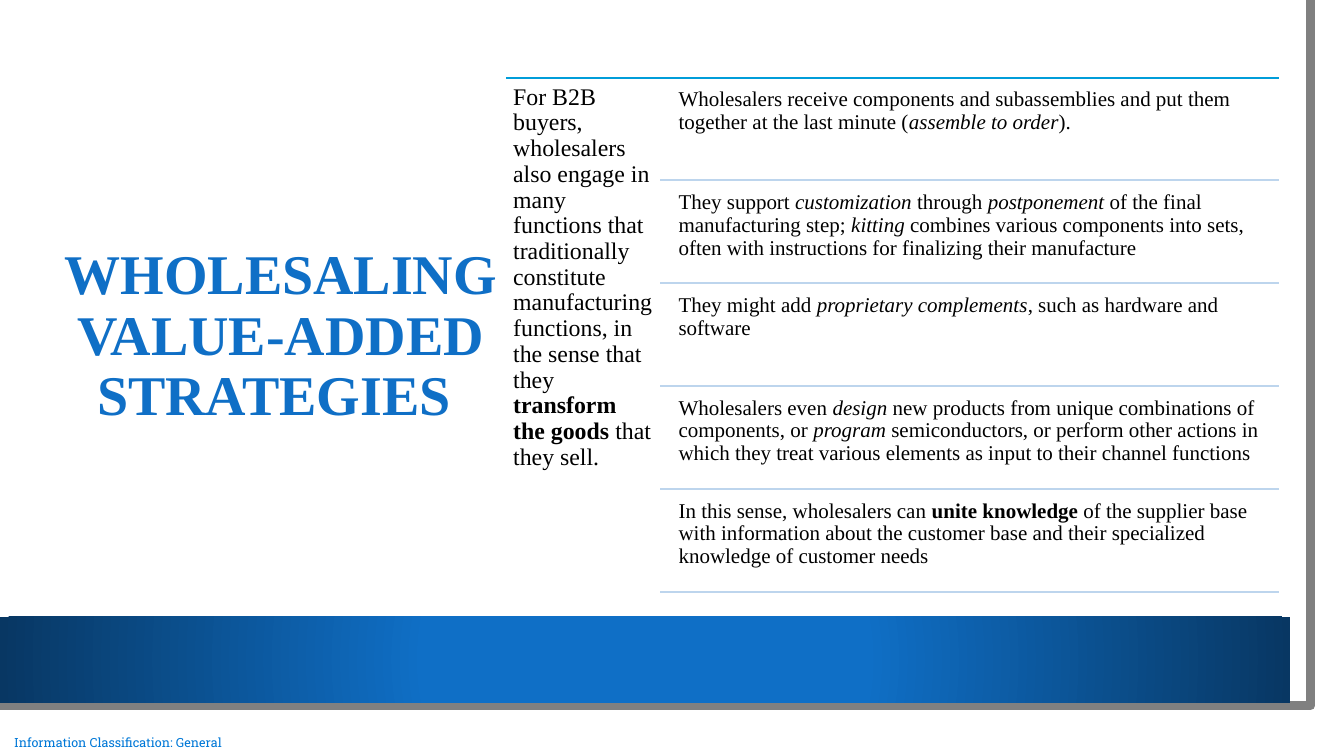
from lxml import etree
from pptx import Presentation
from pptx.dml.color import RGBColor
from pptx.enum.shapes import MSO_CONNECTOR, MSO_SHAPE
from pptx.enum.text import MSO_ANCHOR, PP_ALIGN
from pptx.oxml import parse_xml
from pptx.oxml.ns import nsdecls, qn
from pptx.util import Inches, Pt

TITLE = "WHOLESALING VALUE-ADDED STRATEGIES "
CLASSIFICATION = "Information Classification: General"
# Each run is (text, style); the style names a font attribute or is None.
PREMISE = [
    ("For B2B buyers, wholesalers also engage in many functions that traditionally "
     "constitute manufacturing functions, in the sense that they ", None),
    ("transform the goods ", "bold"),
    ("that they sell.", None),
]
STRATEGIES = [
    [("Wholesalers receive components and subassemblies and put them together "
      "at the last minute (", None),
     ("assemble to order", "italic"), (").", None)],
    [("They support ", None), ("customization", "italic"), (" through ", None),
     ("postponement", "italic"), (" of the final manufacturing step; ", None),
     ("kitting", "italic"),
     (" combines various components into sets, often with instructions for "
      "finalizing their manufacture", None)],
    [("They might add ", None), ("proprietary complements", "italic"),
     (", such as hardware and software", None)],
    [("Wholesalers even ", None), ("design", "italic"),
     (" new products from unique combinations of components, or ", None),
     ("program", "italic"),
     (" semiconductors, or perform other actions in which they treat various "
      "elements as input to their channel functions", None)],
    [("In this sense, wholesalers can ", None), ("unite knowledge ", "bold"),
     ("of the supplier base with information about the customer base and their "
      "specialized knowledge of customer needs", None)],
]

BLUE = RGBColor(0x0F, 0x6F, 0xC6)
NAVY = RGBColor(0x08, 0x37, 0x63)
CYAN = RGBColor(0x00, 0x9D, 0xD9)
PALE_BLUE = RGBColor(0xBD, 0xD5, 0xED)
LABEL_BLUE = RGBColor(0x00, 0x78, 0xD7)
GRAY = RGBColor(0x80, 0x80, 0x80)
BLACK = RGBColor(0, 0, 0)
SERIF, SLAB = "Times New Roman", "Roboto Slab"
TOP, MIDDLE = MSO_ANCHOR.TOP, MSO_ANCHOR.MIDDLE
LEFT, CENTER = PP_ALIGN.LEFT, PP_ALIGN.CENTER
STRAIGHT, RECTANGLE = MSO_CONNECTOR.STRAIGHT, MSO_SHAPE.RECTANGLE

# Content grid, in inches
GRID_TOP, GRID_HEIGHT = 0.77, 5.15
PREMISE_LEFT, PREMISE_WIDTH = 5.02, 1.53
RULE_LEFT = PREMISE_LEFT + PREMISE_WIDTH
STRATEGY_LEFT, GRID_RIGHT = 6.67, 12.69
ROW_GAP, ROW_HEIGHT = 0.05, 0.97
ROW_PITCH = 1.02
PAGE_EDGE = [(12.82, 0), (12.85, 7.02), (-0.03, 7.01)]


def place(shape, left, top, width, height):
    box = dict(left=left, top=top, width=width, height=height)
    for side, length in box.items():
        setattr(shape, side, Inches(length))


def write(shape, runs, size, color, font=SERIF, inset=0.0, anchor=TOP,
          align=LEFT, spacing=0.9, bold=False):
    frame = shape.text_frame
    frame_format = dict(word_wrap=True, vertical_anchor=anchor)
    for side in ("left", "right", "top", "bottom"):
        frame_format["margin_" + side] = Inches(inset)
    for name, value in frame_format.items():
        setattr(frame, name, value)
    paragraph = frame.paragraphs[0]
    paragraph.alignment, paragraph.line_spacing = align, spacing
    paragraph.space_before = Pt(0)
    for text, style in runs:
        run = paragraph.add_run()
        run.text = text
        run_format = dict(name=font, size=Pt(size), bold=bold, italic=False)
        if style:
            run_format[style] = True
        for name, value in run_format.items():
            setattr(run.font, name, value)
        run.font.color.rgb = color


def add_text(slide, box, runs, **text_format):
    shape = slide.shapes.add_textbox(0, 0, 0, 0)
    place(shape, *box)
    write(shape, runs, **text_format)


def add_rule(slide, left, y, color):
    rule = slide.shapes.add_connector(
        STRAIGHT, Inches(left), Inches(y), Inches(GRID_RIGHT), Inches(y))
    rule.line.color.rgb, rule.line.width = color, Pt(1.5)
    etree.SubElement(rule._element.spPr, qn("a:effectLst"))


def add_page_edge(slide):
    start, *corners = PAGE_EDGE
    builder = slide.shapes.build_freeform(*start, scale=Inches(1))
    builder.add_line_segments(corners, close=False)
    edge = builder.convert_to_shape()
    edge.shadow.inherit = False
    edge.fill.background()
    edge.line.color.rgb, edge.line.width = GRAY, Pt(6.5)


def add_footer_band(slide):
    """Blue band that darkens from its centre outwards."""
    band = slide.shapes.add_shape(RECTANGLE, 0, 0, 0, 0)
    place(band, 0, 6.12, 12.8, 0.85)
    band.shadow.inherit = False
    band.line.fill.background()
    gradient = parse_xml(
        f'<a:gradFill {nsdecls("a")} rotWithShape="1"><a:gsLst>'
        f'<a:gs pos="34000"><a:srgbClr val="{BLUE}"/></a:gs>'
        f'<a:gs pos="100000"><a:srgbClr val="{NAVY}"/></a:gs></a:gsLst>'
        '<a:path path="circle"><a:fillToRect l="50000" t="50000" r="50000" b="50000"/>'
        '</a:path></a:gradFill>')
    band._element.spPr.find(qn("a:prstGeom")).addnext(gradient)


def main():
    deck = Presentation()
    deck.slide_width, deck.slide_height = Inches(13.33), Inches(7.5)
    title_only = deck.slide_layouts[5]
    slide = deck.slides.add_slide(title_only)

    add_page_edge(slide)
    add_footer_band(slide)
    add_text(slide, (0.14, 7.24, 2.33, 0.26), [(CLASSIFICATION, None)], size=9,
             color=LABEL_BLUE, font=SLAB, anchor=MIDDLE, spacing=1.0)

    title = slide.shapes.title
    place(title, 0.17, GRID_TOP, 5.23, GRID_HEIGHT)
    write(title, [(TITLE, None)], size=40, color=BLUE, inset=0.1,
          anchor=MIDDLE, align=CENTER, bold=True)

    add_rule(slide, PREMISE_LEFT, GRID_TOP, CYAN)
    add_text(slide, (PREMISE_LEFT, GRID_TOP, PREMISE_WIDTH, GRID_HEIGHT), PREMISE,
             size=17, color=BLACK, inset=0.07)
    for row, strategy in enumerate(STRATEGIES):
        row_top = GRID_TOP + row * ROW_PITCH
        add_text(slide, (STRATEGY_LEFT, row_top + ROW_GAP,
                         GRID_RIGHT - STRATEGY_LEFT, ROW_HEIGHT),
                 strategy, size=15, color=BLACK, inset=0.06)
        add_rule(slide, RULE_LEFT, row_top + ROW_PITCH, PALE_BLUE)

    deck.save("out.pptx")


if __name__ == "__main__":
    main()
